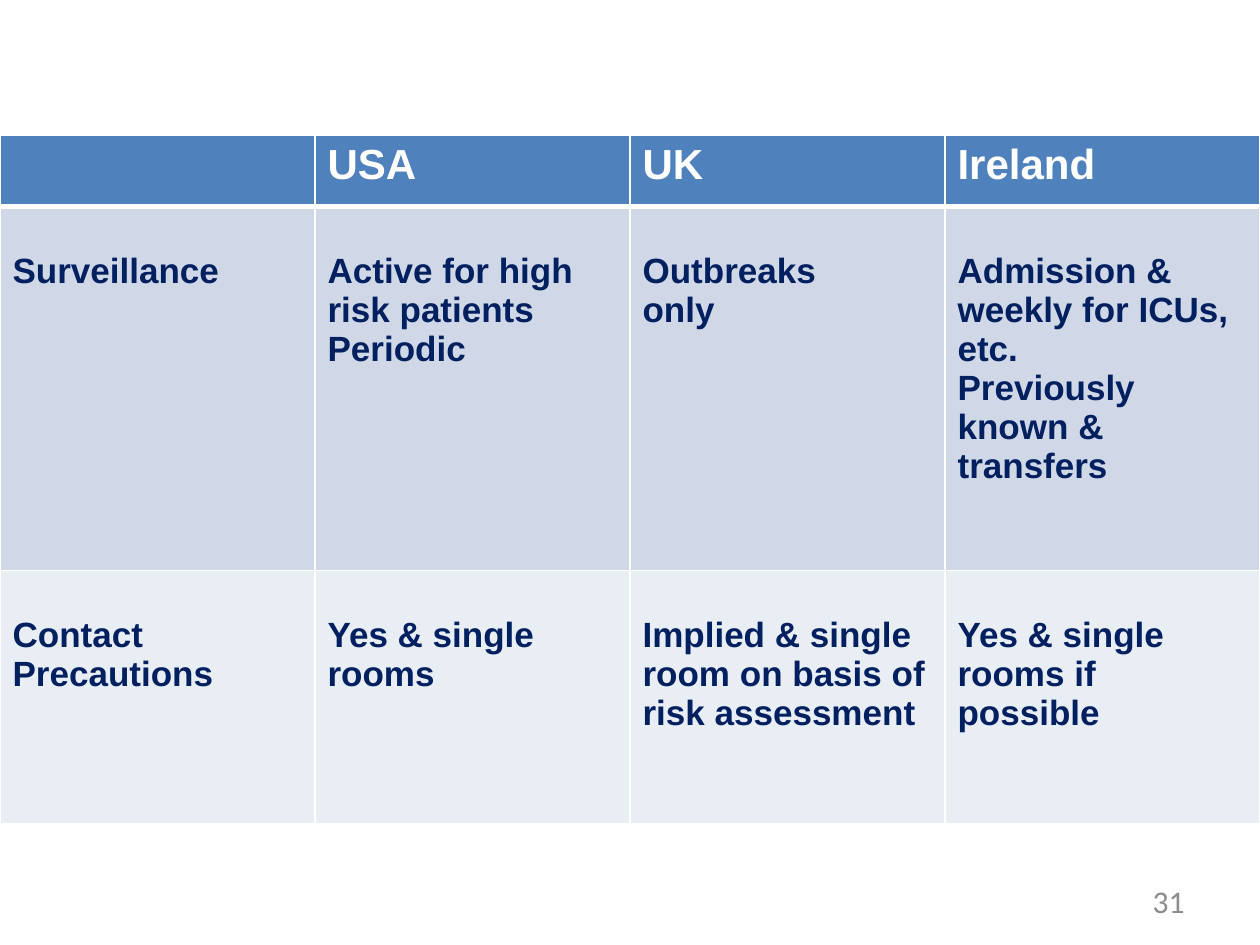
from lxml import etree
from pptx import Presentation
from pptx.dml.color import RGBColor
from pptx.enum import text
from pptx.oxml import ns
from pptx.util import Inches, Pt

COLOURS = {
    "header": "4F81BD",
    "surveillance": "D0D8E8",
    "precautions": "E9EDF4",
    "white": "FFFFFF",
    "navy": "002060",
    "grey": "8C8C8C",
}
COUNTRIES = ["", "USA", "UK", "Ireland"]
SURVEILLANCE = [
    "Surveillance",
    "Active for high risk patients\nPeriodic",
    "Outbreaks\nonly",
    "Admission & weekly for ICUs, etc.\nPreviously known & transfers",
]
PRECAUTIONS = [
    "Contact Precautions",
    "Yes & single rooms",
    "Implied & single room on basis of risk assessment",
    "Yes & single rooms if possible",
]
ROWS = [
    (COUNTRIES, 0.57, "header", "white", 24, 0.05, 3),
    (SURVEILLANCE, 2.89, "surveillance", "navy", 20, 0.36, 1),
    (PRECAUTIONS, 2.01, "precautions", "navy", 20, 0.36, 1),
]


def rgb(name):
    """Return the named colour."""
    return RGBColor.from_string(COLOURS[name])


def style_text(frame, font_name, size, colour, bold):
    """Format every run of a text frame."""
    for paragraph in frame.paragraphs:
        for run in paragraph.runs:
            run.font.name = font_name
            run.font.size = Pt(size)
            run.font.bold = bold
            run.font.color.rgb = rgb(colour)


def add_borders(cell, widths):
    """Draw white borders, given as widths in points by side."""
    properties = cell._tc.get_or_add_tcPr()
    for position, (side, width) in enumerate(widths.items()):
        line = etree.Element(ns.qn(f"a:ln{side}"), w=str(Pt(width)))
        fill = etree.SubElement(line, ns.qn("a:solidFill"))
        etree.SubElement(fill, ns.qn("a:srgbClr"), val=COLOURS["white"])
        properties.insert(position, line)


def add_comparison(slide, left, top, width):
    """Place the table that compares the countries."""
    height = sum(Inches(row[1]) for row in ROWS)
    comparison = slide.shapes.add_table(
        len(ROWS), len(COUNTRIES), left, top, width, height
    ).table
    for column in comparison.columns:
        column.width = width // len(COUNTRIES)
    above = 1
    for index, (entries, tall, fill, ink, size, margin, below) in enumerate(ROWS):
        comparison.rows[index].height = Inches(tall)
        for cell, entry in zip(comparison.rows[index].cells, entries):
            cell.text_frame.text = entry
            cell.margin_top = Inches(margin)
            style_text(cell.text_frame, "Arial", size, ink, True)
            cell.fill.solid()
            cell.fill.fore_color.rgb = rgb(fill)
            add_borders(cell, {"L": 1, "R": 1, "T": above, "B": below})
        above = below


def add_page_number(slide, left, top, width, height):
    """Place the page number at the right of its box."""
    frame = slide.shapes.add_textbox(left, top, width, height).text_frame
    frame.word_wrap = True
    frame.vertical_anchor = text.MSO_ANCHOR.MIDDLE
    frame.text = "31"
    frame.paragraphs[0].alignment = text.PP_ALIGN.RIGHT
    style_text(frame, "Calibri", 18, "grey", False)


def main():
    """Build and save the slide."""
    deck = Presentation()
    deck.slide_width, deck.slide_height = Inches(10), Inches(7.5)
    slide = deck.slides.add_slide(deck.slide_layouts[6])
    add_comparison(slide, Inches(0), Inches(1.07), deck.slide_width)
    add_page_number(slide, Inches(7.17), Inches(6.95), Inches(2.33), Inches(0.4))
    deck.save("out.pptx")


if __name__ == "__main__":
    main()
